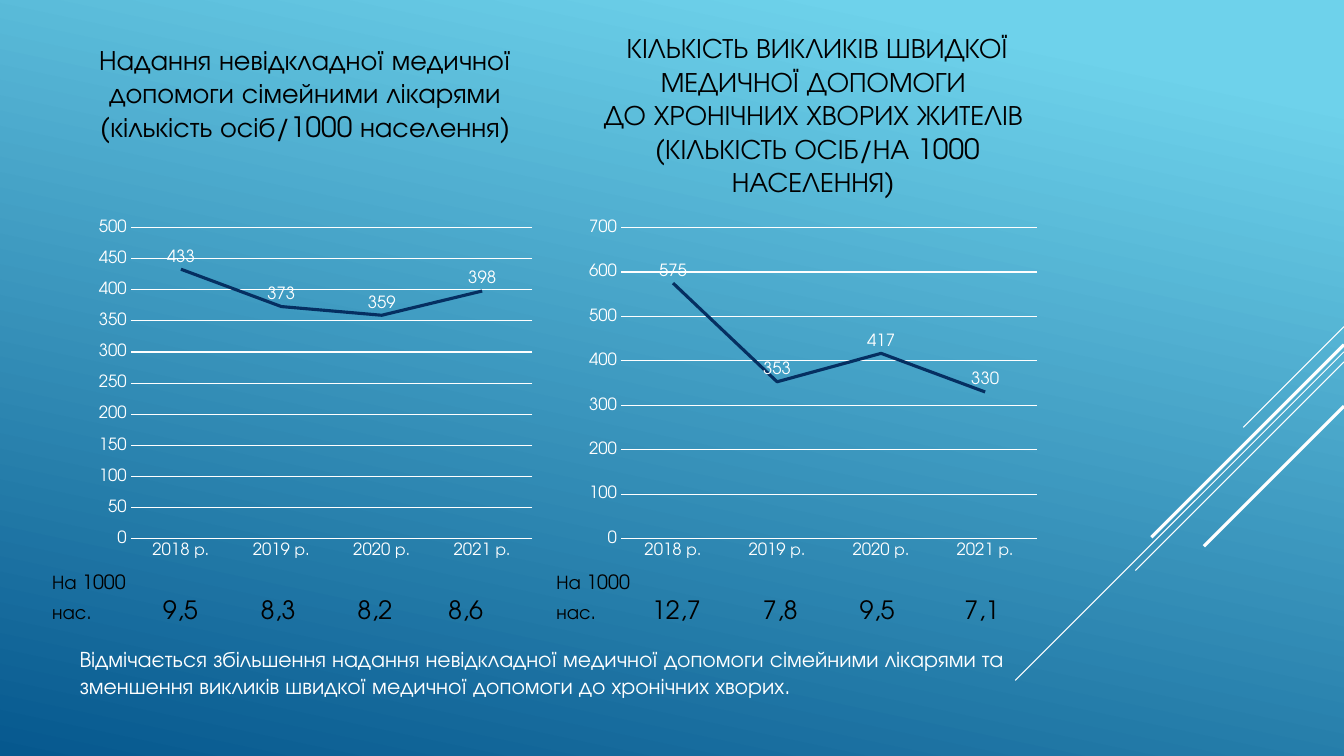
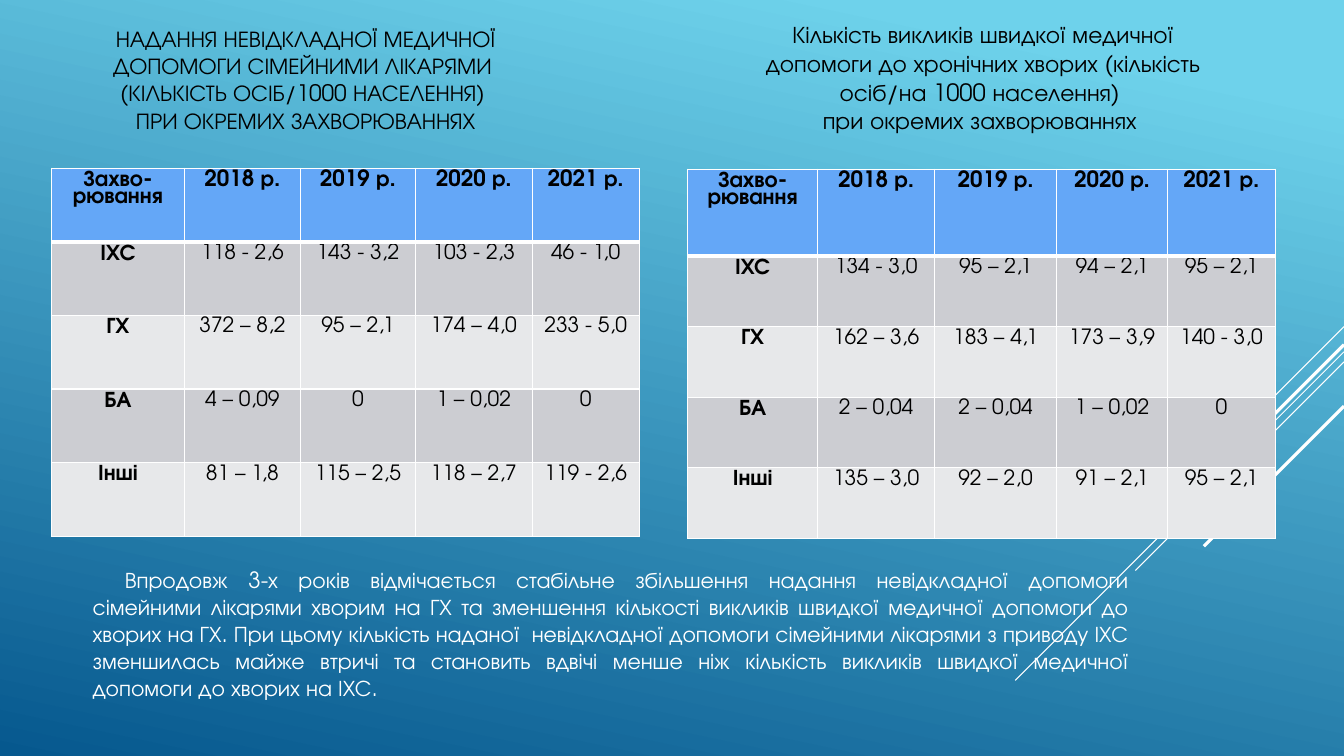
"""Build two slides on urgent care and ambulance calls: line charts, then tables by disease."""
from lxml import etree
from pptx import Presentation
from pptx.chart import data
from pptx.dml.color import RGBColor
from pptx.enum import chart as charts, shapes, text as texts
from pptx.oxml import ns
from pptx.util import Inches, Pt

FONT = "TeX Gyre Adventor"
WHITE, BLACK, NAVY = "FFFFFF", "000000", "052F61"
SKY, DEEP = "6ED2EB", "06588E"
HEADER, BANDS = "64A7F7", ("E7E8EA", "CCCDD2")
LEFT, CENTER, JUSTIFY = texts.PP_ALIGN.LEFT, texts.PP_ALIGN.CENTER, texts.PP_ALIGN.JUSTIFY


def rgb(color):
    """Turn a hex string into a colour."""
    return RGBColor.from_string(color)


def write(frame, text, size=16, color=BLACK, bold=False, align=LEFT, spacing=1.0):
    """Add text to the last paragraph of a frame and return that paragraph."""
    frame.word_wrap = True
    paragraph = frame.paragraphs[-1]
    paragraph.alignment = align
    paragraph.line_spacing = spacing
    for index, line in enumerate(text.split("\n")):
        if index:
            paragraph.add_line_break()
        run = paragraph.add_run()
        run.text = line
        run.font.name, run.font.size, run.font.bold = FONT, Pt(size), bold
        run.font.color.rgb = rgb(color)
    return paragraph


prs = Presentation()
prs.slide_width, prs.slide_height = Inches(13.33), Inches(7.5)

backdrop = prs.slide_master.background.fill
backdrop.gradient()
backdrop.gradient_angle = 258
for stop, position, color in zip(backdrop.gradient_stops, (0.1, 1), (SKY, DEEP)):
    stop.position = position
    stop.color.rgb = rgb(color)

layout = prs.slide_layouts[5]
headings = [
    ((5.63, 0.44, 4.95, 1.39), 20,
     "КІЛЬКІСТЬ ВИКЛИКІВ ШВИДКОЇ МЕДИЧНОЇ ДОПОМОГИ \n"
     "ДО ХРОНІЧНИХ ХВОРИХ ЖИТЕЛІВ \n(КІЛЬКІСТЬ ОСІБ/НА 1000 НАСЕЛЕННЯ) "),
    ((0.74, 0.14, 4.58, 1.29), 16.2,
     "НАДАННЯ НЕВІДКЛАДНОЇ МЕДИЧНОЇ ДОПОМОГИ СІМЕЙНИМИ ЛІКАРЯМИ \n"
     "(КІЛЬКІСТЬ ОСІБ/1000 НАСЕЛЕННЯ) \nПРИ ОКРЕМИХ ЗАХВОРЮВАННЯХ"),
]
slides = []
for place, size, heading in headings:
    slide = prs.slides.add_slide(layout)
    title = slide.shapes.title
    title.left, title.top, title.width, title.height = map(Inches, place)
    title.text_frame.auto_size = texts.MSO_AUTO_SIZE.NONE
    title.text_frame.vertical_anchor = texts.MSO_ANCHOR.MIDDLE
    write(title.text_frame, heading, size=size, align=CENTER)
    slides.append(slide)
trends, diseases = slides

rays = [(3.24, 1, 0.75), (3.49, 3.26, 0.75), (3.59, 2.07, 0.75), (3.42, 1.91, 2.25), (4.03, 1.39, 2.25)]
for number, (top, reach, weight) in enumerate(rays):
    ray = trends.shapes.add_connector(
        shapes.MSO_CONNECTOR.STRAIGHT,
        Inches(13.33), Inches(top), Inches(13.33 - reach), Inches(top + reach))
    ray.line.color.rgb = rgb(WHITE)
    ray.line.width = Pt(weight)
    etree.SubElement(ray._element.spPr, ns.qn("a:effectLst"))
    ray._element.nvCxnSpPr.cNvPr.set("id", str(20 + number))
    layout.shapes._spTree.append(ray._element)

years = ["2018 р.", "2019 р.", "2020 р.", "2021 р."]
for place, counts, top_value, step in [
    ((0.89, 2.11, 4.48, 3.5), (433, 373, 359, 398), 500, 50),
    ((5.75, 2.11, 4.63, 3.5), (575, 353, 417, 330), 700, 100),
]:
    chart_data = data.CategoryChartData()
    chart_data.categories = years
    chart_data.add_series("Series 1", counts)
    trend = trends.shapes.add_chart(
        charts.XL_CHART_TYPE.LINE, *map(Inches, place), chart_data).chart
    trend.has_title = trend.has_legend = False
    trend.font.name, trend.font.size = FONT, Pt(12)
    trend.font.color.rgb = rgb(WHITE)
    scale = trend.value_axis
    scale.minimum_scale, scale.maximum_scale, scale.major_unit = 0, top_value, step
    scale.format.line.fill.background()
    for line in (scale.major_gridlines.format.line, trend.category_axis.format.line):
        line.color.rgb = rgb(WHITE)
        line.width = Pt(0.75)
    for axis in (scale, trend.category_axis):
        axis.major_tick_mark = charts.XL_TICK_MARK.NONE
    plot = trend.plots[0]
    plot.vary_by_categories = False
    counted = plot.series[0]
    counted.smooth = False
    counted.format.line.color.rgb = rgb(NAVY)
    counted.format.line.width = Pt(2.25)
    labels = counted.data_labels
    labels.show_value = True
    labels.position = charts.XL_LABEL_POSITION.ABOVE
    labels.font.name, labels.font.size = FONT, Pt(12)
    labels.font.color.rgb = rgb(WHITE)

for place, rates, stops in [
    ((0.42, 5.61, 4.94, 0.94), ("9,5", "8,3", "8,2", "8,6"), (1.27, 2.24, 3.2, 4.1)),
    ((5.42, 5.61, 6.85, 0.94), ("12,7", "7,8", "9,5", "7,1"), (1.19, 2.22, 3.18, 4.22)),
]:
    rate_row = trends.shapes.add_textbox(*map(Inches, place)).text_frame
    write(rate_row, "На 1000\nнас.", size=14)
    paragraph = write(rate_row, "\t" + "\t".join(rates), size=18)
    tabs = etree.SubElement(paragraph._p.get_or_add_pPr(), ns.qn("a:tabLst"))
    for stop in stops:
        etree.SubElement(tabs, ns.qn("a:tab"), pos=str(Inches(stop)), algn="ctr")

for slide, place, text, style in [
    (trends, (0.83, 0.37, 4.39, 1.2),
     "Надання невідкладної медичної допомоги сімейними лікарями (кількість осіб/1000 населення)",
     dict(size=20, align=CENTER)),
    (trends, (0.69, 6.35, 9.68, 0.64),
     "Відмічається збільшення надання невідкладної медичної допомоги сімейними лікарями та "
     "зменшення викликів швидкої медичної допомоги до хронічних хворих.",
     dict(color=WHITE)),
    (diseases, (7.48, 0.15, 4.54, 1.25),
     "Кількість викликів швидкої медичної допомоги до хронічних хворих "
     "(кількість осіб/на 1000 населення) \nпри окремих захворюваннях ",
     dict(size=17, align=CENTER)),
]:
    write(slide.shapes.add_textbox(*map(Inches, place)).text_frame, text, **style)

summary = diseases.shapes.add_textbox(*map(Inches, (0.82, 5.57, 10.48, 1.45)))
paragraph = write(
    summary.text_frame,
    "Впродовж 3-х років відмічається стабільне збільшення надання невідкладної допомоги "
    "сімейними лікарями хворим на ГХ та зменшення кількості викликів швидкої медичної допомоги "
    "до хворих на ГХ. При цьому кількість наданої  невідкладної допомоги сімейними лікарями "
    "з приводу ІХС зменшилась майже втричі та становить вдвічі менше ніж кількість викликів "
    "швидкої медичної допомоги до хворих на ІХС.",
    color=WHITE, align=JUSTIFY)
paragraph._p.get_or_add_pPr().set("indent", str(Inches(0.32)))

for place, widths, heights, records in [
    ((0.51, 1.67, 5.83, 3.66), (1.32, 1.15, 1.14, 1.16, 1.06), (0.73,) * 5, [
        ["Захво-\nрювання", *years],
        ["ІХС", "118 - 2,6", "143 - 3,2", "103 - 2,3", "46 - 1,0"],
        ["ГХ", "372 – 8,2", "95 – 2,1", "174 – 4,0", "233 - 5,0"],
        ["БА", "4 – 0,09", "0", "1 – 0,02", "0"],
        ["Інші", "81 – 1,8", "115 – 2,5", "118 – 2,7", "119 - 2,6"],
    ]),
    ((6.82, 1.68, 5.83, 3.66), (1.29, 1.16, 1.21, 1.1, 1.07), (0.86,) + (0.7,) * 4, [
        ["Захво-рювання", *years],
        ["ІХС", "134 - 3,0", "95 – 2,1", "94 – 2,1", "95 – 2,1"],
        ["ГХ", "162 – 3,6", "183 – 4,1", "173 – 3,9", "140 - 3,0"],
        ["БА", "2 – 0,04", "2 – 0,04", "1 – 0,02", "0"],
        ["Інші", "135 – 3,0", "92 – 2,0", "91 – 2,1", "95 – 2,1"],
    ]),
]:
    table = diseases.shapes.add_table(5, 5, *map(Inches, place)).table
    table.horz_banding = False
    for column, width in zip(table.columns, widths):
        column.width = Inches(width)
    for row, height in zip(table.rows, heights):
        row.height = Inches(height)
    for r, record in enumerate(records):
        for c, entry in enumerate(record):
            cell = table.cell(r, c)
            cell.margin_left = cell.margin_right = Inches(0.05)
            strong = r == 0 or c == 0
            write(cell.text_frame, entry, size=16 if strong else 15, bold=strong,
                  align=CENTER, spacing=0.8)
            for side in "LRTB":
                weight = 3 if (r, side) in ((0, "B"), (1, "T")) else 1
                border = etree.SubElement(
                    cell._tc.get_or_add_tcPr(), ns.qn("a:ln" + side), w=str(Pt(weight)))
                paint = etree.SubElement(border, ns.qn("a:solidFill"))
                etree.SubElement(paint, ns.qn("a:srgbClr"), val=WHITE)
            cell.fill.solid()
            cell.fill.fore_color.rgb = rgb(BANDS[r % 2] if r else HEADER)

prs.save("out.pptx")
